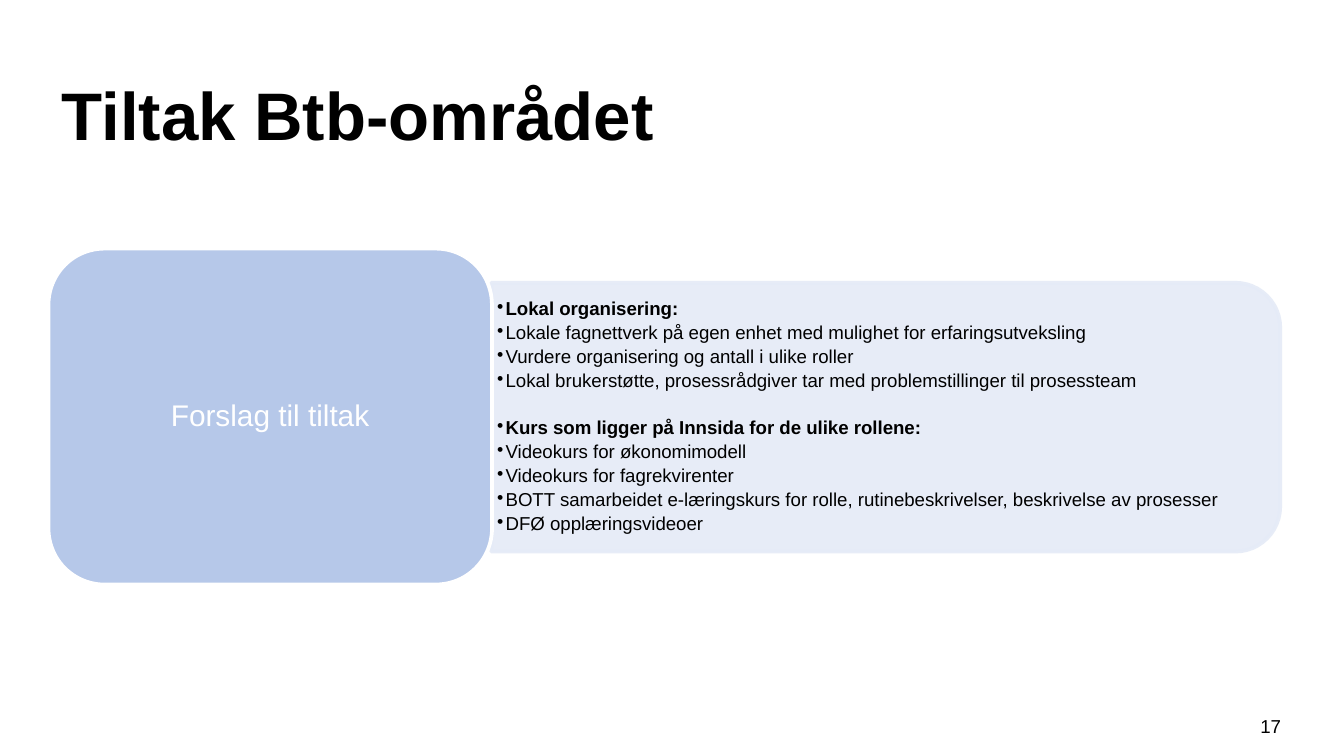
from dataclasses import dataclass

from lxml import etree
from pptx import Presentation
from pptx.dml.color import RGBColor
from pptx.dml.fill import FillFormat
from pptx.enum.shapes import MSO_SHAPE
from pptx.enum.text import MSO_ANCHOR, PP_ALIGN
from pptx.oxml.ns import qn
from pptx.shapes.autoshape import Shape
from pptx.slide import Slide
from pptx.text.text import TextFrame
from pptx.util import Pt

ROUNDED = MSO_SHAPE.ROUNDED_RECTANGLE
ROUNDED_END = MSO_SHAPE.ROUND_2_SAME_RECTANGLE
TOP, MIDDLE, BOTTOM = MSO_ANCHOR.TOP, MSO_ANCHOR.MIDDLE, MSO_ANCHOR.BOTTOM
LEFT, CENTER = PP_ALIGN.LEFT, PP_ALIGN.CENTER

BLACK = RGBColor(0x00, 0x00, 0x00)
WHITE = RGBColor(0xFF, 0xFF, 0xFF)
BLUE = RGBColor(0xB6, 0xC8, 0xE9)
PALE_BLUE = RGBColor(0xE5, 0xEB, 0xF7)

FONT = "Arial"
BULLET_INDENT = 4.5
GROUP_GAP = 12.3


@dataclass(frozen=True)
class Box:
    left: float
    top: float
    width: float
    height: float

    def lengths(self) -> tuple[Pt, Pt, Pt, Pt]:
        return Pt(self.left), Pt(self.top), Pt(self.width), Pt(self.height)


@dataclass(frozen=True)
class MeasureGroup:
    heading: str
    measures: tuple[str, ...]


MEASURE_GROUPS = (
    MeasureGroup("Lokal organisering:", (
        "Lokale fagnettverk på egen enhet med mulighet for erfaringsutveksling",
        "Vurdere organisering og antall i ulike roller",
        "Lokal brukerstøtte, prosessrådgiver tar med problemstillinger til prosessteam",
    )),
    MeasureGroup("Kurs som ligger på Innsida for de ulike rollene:", (
        "Videokurs for økonomimodell",
        "Videokurs for fagrekvirenter",
        "BOTT samarbeidet e-læringskurs for rolle, rutinebeskrivelser, beskrivelse av prosesser",
        "DFØ opplæringsvideoer",
    )),
)


def write(frame: TextFrame, text: str, *, size: float, color: RGBColor = BLACK,
          bold: bool = False, align: PP_ALIGN = LEFT, line_spacing: float = 1.0,
          before: float = 0, after: float = 0, bullet: bool = False) -> None:
    paragraph = frame.paragraphs[0]
    if paragraph.runs:
        paragraph = frame.add_paragraph()
    paragraph.alignment = align
    paragraph.line_spacing = line_spacing
    paragraph.space_before = Pt(before)
    paragraph.space_after = Pt(after)
    if bullet:
        properties = paragraph._p.get_or_add_pPr()
        properties.set("marL", str(Pt(BULLET_INDENT)))
        properties.set("indent", str(-Pt(BULLET_INDENT)))
        etree.SubElement(properties, qn("a:buChar"), char="•")
    run = paragraph.add_run()
    run.text = text
    run.font.name = FONT
    run.font.size = Pt(size)
    run.font.bold = bold
    run.font.color.rgb = color


def set_up(frame: TextFrame, anchor: MSO_ANCHOR, side: float, edge: float) -> TextFrame:
    frame.word_wrap = True
    frame.vertical_anchor = anchor
    frame.margin_left = frame.margin_right = Pt(side)
    frame.margin_top = frame.margin_bottom = Pt(edge)
    return frame


def add_text_area(slide: Slide, box: Box, anchor: MSO_ANCHOR = TOP,
                  side: float = 7.2, edge: float = 3.6) -> TextFrame:
    return set_up(slide.shapes.add_textbox(*box.lengths()).text_frame, anchor, side, edge)


def paint(fill: FillFormat, color: RGBColor, opacity: int) -> None:
    fill.solid()
    fill.fore_color.rgb = color
    if opacity < 100:
        solid = fill._xPr.find(qn("a:solidFill"))
        etree.SubElement(solid[0], qn("a:alpha"), val=str(opacity * 1000))


def add_panel(slide: Slide, kind: MSO_SHAPE, box: Box, fill: RGBColor,
              line: RGBColor, opacity: int = 100, rotation: float = 0) -> Shape:
    panel = slide.shapes.add_shape(kind, *box.lengths())
    panel.shadow.inherit = False
    panel.rotation = rotation
    paint(panel.fill, fill, opacity)
    paint(panel.line.fill, line, opacity)
    panel.line.width = Pt(2)
    return panel


def main() -> None:
    presentation = Presentation()
    presentation.slide_width = Pt(720)
    presentation.slide_height = Pt(405)
    slide = presentation.slides.add_slide(presentation.slide_layouts[6])

    page_number = add_text_area(slide, Box(667.5, 379.5, 26.5, 21.5), side=0)
    write(page_number, "17", size=10, align=CENTER)

    title = add_text_area(slide, Box(26, 34.5, 660, 51.5), BOTTOM)
    write(title, "Tiltak Btb-området", size=36, bold=True)

    add_panel(slide, ROUNDED_END, Box(402.5, 12.2, 144, 422.6),
              PALE_BLUE, PALE_BLUE, opacity=90, rotation=90)
    measures = add_text_area(slide, Box(263.5, 158.4, 415.5, 130.3), MIDDLE, 2.9, 1.4)
    for index, group in enumerate(MEASURE_GROUPS):
        for row, text in enumerate((group.heading, *group.measures)):
            starts_group = row == 0
            write(measures, text, size=10, bold=starts_group, line_spacing=0.9,
                  before=GROUP_GAP if starts_group and index else 0,
                  after=2, bullet=True)

    proposal = add_panel(slide, ROUNDED, Box(26, 133.2, 237.6, 180), BLUE, WHITE)
    proposal_label = set_up(proposal.text_frame, MIDDLE, 5, 2.2)
    write(proposal_label, "Forslag til tiltak", size=16, color=WHITE,
          align=CENTER, line_spacing=0.9)

    presentation.save("out.pptx")


if __name__ == "__main__":
    main()
